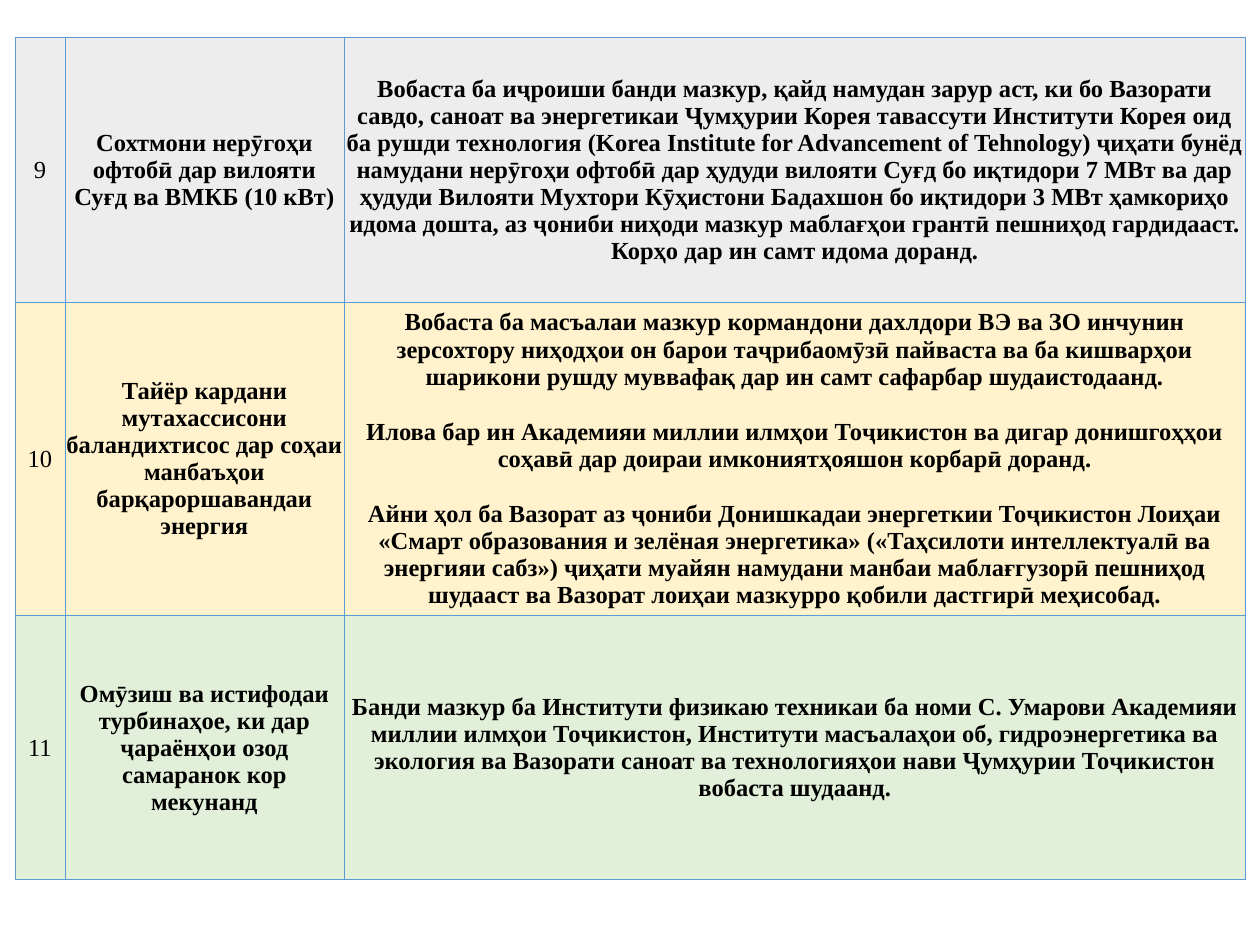
from lxml.etree import SubElement
from pptx import Presentation
from pptx.dml.color import RGBColor
from pptx.enum.text import MSO_ANCHOR, PP_ALIGN
from pptx.oxml.ns import qn
from pptx.util import Pt

PX = 914400 // 126
COLORS = {"text": "000000", "line": "5B9BD5",
          "grey": "EDEDED", "yellow": "FFF2CC", "green": "E2F0D9"}
COLS = [50, 279, 902]

# height, fill, number, task, paragraphs on progress
ROWS = [
    (265, "grey", "9",
     "Сохтмони нерӯгоҳи офтобӣ дар вилояти Суғд ва ВМКБ (10 кВт)",
     ["Вобаста ба иҷроиши банди мазкур, қайд намудан зарур аст, ки бо Вазорати "
      "савдо, саноат ва энергетикаи Ҷумҳурии Корея тавассути Институти Корея оид "
      "ба рушди технология (Korea Institute for Advancement of Tehnology) ҷиҳати "
      "бунёд намудани нерӯгоҳи офтобӣ дар ҳудуди вилояти Суғд бо иқтидори 7 МВт "
      "ва дар ҳудуди Вилояти Мухтори Кӯҳистони Бадахшон бо иқтидори 3 МВт "
      "ҳамкориҳо идома дошта, аз ҷониби ниҳоди мазкур маблағҳои грантӣ пешниҳод "
      "гардидааст. Корҳо дар ин самт идома доранд."]),
    (313, "yellow", "10",
     "Тайёр кардани мутахассисони баландихтисос дар соҳаи манбаъҳои "
     "барқароршавандаи энергия",
     ["Вобаста ба масъалаи мазкур кормандони дахлдори ВЭ ва ЗО инчунин "
      "зерсохтору ниҳодҳои он барои таҷрибаомӯзӣ пайваста ва ба кишварҳои "
      "шарикони рушду муввафақ дар ин самт сафарбар шудаистодаанд.",
      "Илова бар ин Академияи миллии илмҳои Тоҷикистон ва дигар донишгоҳҳои "
      "соҳавӣ дар доираи имкониятҳояшон корбарӣ доранд.",
      "Айни ҳол ба Вазорат аз ҷониби Донишкадаи энергеткии Тоҷикистон Лоиҳаи "
      "«Смарт образования и зелёная энергетика» («Таҳсилоти интеллектуалӣ ва "
      "энергияи сабз») ҷиҳати муайян намудани манбаи маблағгузорӣ пешниҳод "
      "шудааст ва Вазорат лоиҳаи мазкурро қобили дастгирӣ меҳисобад."]),
    (265, "green", "11",
     "Омӯзиш ва истифодаи турбинаҳое, ки дар ҷараёнҳои озод самаранок кор "
     "мекунанд",
     ["Банди мазкур ба Институти физикаю техникаи ба номи С. Умарови Академияи "
      "миллии илмҳои Тоҷикистон, Институти масъалаҳои об, гидроэнергетика ва "
      "экология ва Вазорати саноат ва технологияҳои нави Ҷумҳурии Тоҷикистон "
      "вобаста шудаанд."]),
]


def frame(cell):
    """Draw a thin line on all four sides of a cell."""
    for side in ("a:lnL", "a:lnR", "a:lnT", "a:lnB"):
        line = SubElement(cell._tc.get_or_add_tcPr(), qn(side), w=str(Pt(0.5)))
        fill = SubElement(line, qn("a:solidFill"))
        SubElement(fill, qn("a:srgbClr"), val=COLORS["line"])


def write(cell, paras, bold):
    cell.text_frame.text = "\n".join(paras)
    for i, para in enumerate(cell.text_frame.paragraphs):
        para.alignment = PP_ALIGN.CENTER
        para.space_before = Pt(16 if i else 0)
        font = para.runs[0].font
        font.name = "Times New Roman"
        font.size = Pt(14)
        font.bold = bold
        font.color.rgb = RGBColor.from_string(COLORS["text"])


deck = Presentation()
deck.slide_width = 1260 * PX
deck.slide_height = 945 * PX
slide = deck.slides.add_slide(deck.slide_layouts[6])

height = sum(row[0] for row in ROWS)
table = slide.shapes.add_table(len(ROWS), len(COLS), 15 * PX, 37 * PX,
                               sum(COLS) * PX, height * PX).table
table.first_row = False
table.horz_banding = False
for col, width in zip(table.columns, COLS):
    col.width = width * PX

for row, (height, color, number, task, progress) in zip(table.rows, ROWS):
    row.height = height * PX
    for i, (cell, paras) in enumerate(zip(row.cells, ([number], [task], progress))):
        frame(cell)
        cell.fill.solid()
        cell.fill.fore_color.rgb = RGBColor.from_string(COLORS[color])
        cell.vertical_anchor = MSO_ANCHOR.MIDDLE
        cell.margin_left = cell.margin_right = cell.margin_top = PX
        cell.margin_bottom = 0
        write(cell, paras, bold=i > 0)

deck.save("out.pptx")
